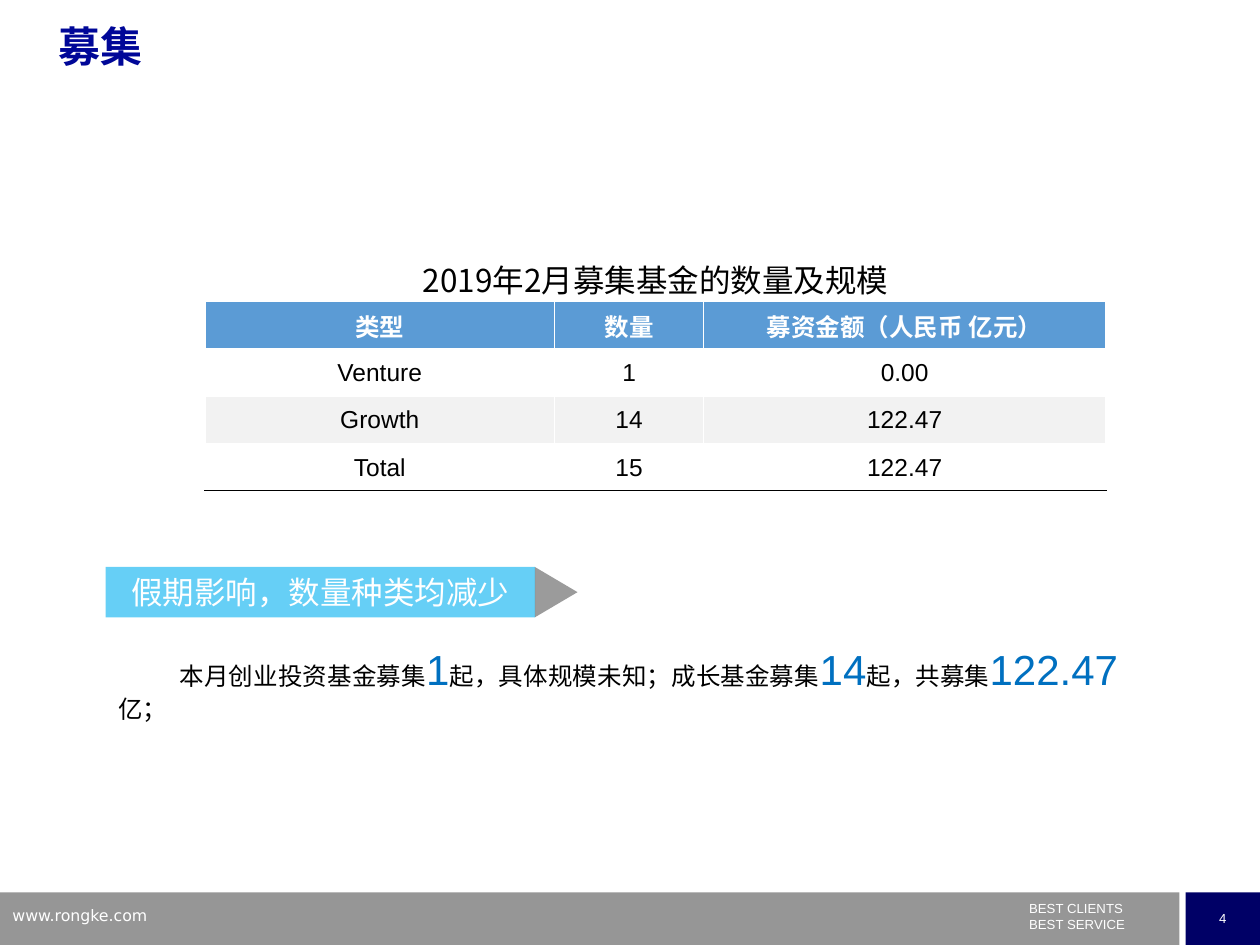
"""Build the fundraising slide with a fund table and a short commentary."""
from lxml import etree
from pptx import Presentation
from pptx.dml.color import RGBColor
from pptx.enum import shapes, text
from pptx.oxml import ns
from pptx.util import Pt

WHITE = RGBColor(0xFF, 0xFF, 0xFF)
BLACK = RGBColor(0, 0, 0)
GREY = RGBColor(0x96, 0x96, 0x96)
DARK_GREY = RGBColor(0x59, 0x59, 0x59)
BAND = RGBColor(0xF2, 0xF2, 0xF2)
NAVY = RGBColor(0, 0, 0x66)
TITLE_BLUE = RGBColor(0, 0x07, 0x98)
HEADER_BLUE = RGBColor(0x5B, 0x9B, 0xD5)
SKY = RGBColor(0, 0xB0, 0xF0)
NUMBER_BLUE = RGBColor(0, 0x70, 0xC0)

ARIAL, DEJAVU = "Arial", "DejaVu Sans"
CJK, CJK_JP = "Noto Sans CJK SC", "Noto Sans CJK JP"
CENTER = text.PP_ALIGN.CENTER
MIDDLE = text.MSO_ANCHOR.MIDDLE


def style(size, name, color, bold=False):
    return {"size": Pt(size), "name": name, "color": color, "bold": bold}


TITLE = style(24, ARIAL, TITLE_BLUE, True)
CAPTION = style(18, CJK_JP, BLACK)
HEADER = style(14, CJK, WHITE, True)
CELL = style(14, ARIAL, BLACK)
CALLOUT = style(18, CJK, WHITE)
BODY = style(14, CJK, BLACK)
NUMBER = style(24, ARIAL, NUMBER_BLUE)
FOOTER = style(7.5, ARIAL, WHITE)
ADDRESS = style(9, DEJAVU, WHITE)

COMMENTARY = [
    ("本月创业投资基金募集", BODY), ("1", NUMBER),
    ("起，具体规模未知；成长基金募集", BODY), ("14", NUMBER),
    ("起，共募集", BODY), ("122.47", NUMBER), ("亿；", BODY),
]
TABLE_ROWS = [
    (("2019年2月募集基金的数量及规模",), CAPTION, None),
    (("类型", "数量", "募资金额（人民币 亿元）"), HEADER, HEADER_BLUE),
    (("Venture", "1", "0.00"), CELL, None),
    (("Growth", "14", "122.47"), CELL, BAND),
    (("Total", "15", "122.47"), CELL, None),
]
COLUMN_WIDTHS = (200, 85, 230)
ROW_HEIGHT = 27


def write(paragraph, runs, **formats):
    for key, value in formats.items():
        setattr(paragraph, key, value)
    for words, look in runs:
        run = paragraph.add_run()
        run.text = words
        for key in ("size", "name", "bold"):
            setattr(run.font, key, look[key])
        run.font.color.rgb = look["color"]
        east_asian = etree.SubElement(run.font._element, ns.qn("a:ea"))
        east_asian.set("typeface", CJK if look["name"] == ARIAL else look["name"])


def add_text(slide, box, paragraphs, frame_formats=None, **formats):
    frame = slide.shapes.add_textbox(*map(Pt, box)).text_frame
    frame.word_wrap = True
    for key, value in (frame_formats or {}).items():
        setattr(frame, key, value)
    for index, runs in enumerate(paragraphs):
        paragraph = frame.add_paragraph() if index else frame.paragraphs[0]
        write(paragraph, runs, **formats)


def add_block(slide, kind, box, color, runs=(), opacity=None, rotation=0):
    shape = slide.shapes.add_shape(kind, *map(Pt, box))
    shape.shadow.inherit = False
    shape.rotation = rotation
    shape.fill.solid()
    shape.fill.fore_color.rgb = color
    shape.line.fill.background()
    if opacity:
        fill_color = shape._element.spPr.find(".//" + ns.qn("a:srgbClr"))
        etree.SubElement(fill_color, ns.qn("a:alpha")).set("val", str(opacity * 1000))
    if runs:
        shape.text_frame.vertical_anchor = MIDDLE
        write(shape.text_frame.paragraphs[0], runs, alignment=CENTER)


def add_bottom_border(cell):
    line = etree.Element(ns.qn("a:lnB"), w=str(Pt(1)))
    fill = etree.SubElement(line, ns.qn("a:solidFill"))
    etree.SubElement(fill, ns.qn("a:srgbClr")).set("val", str(BLACK))
    cell._tc.get_or_add_tcPr().insert(0, line)


def add_fund_table(slide, left, top):
    size = (sum(COLUMN_WIDTHS), ROW_HEIGHT * len(TABLE_ROWS))
    table = slide.shapes.add_table(
        len(TABLE_ROWS), len(COLUMN_WIDTHS), *map(Pt, (left, top, *size))).table
    table.first_row = table.horz_banding = False
    for column, width in zip(table.columns, COLUMN_WIDTHS):
        column.width = Pt(width)
    table.cell(0, 0).merge(table.cell(0, len(COLUMN_WIDTHS) - 1))
    cell_formats = {
        "margin_left": Pt(0.7), "margin_right": Pt(0.7), "margin_top": Pt(0.7),
        "margin_bottom": 0, "vertical_anchor": MIDDLE,
    }
    for row, (values, look, color) in enumerate(TABLE_ROWS):
        table.rows[row].height = Pt(ROW_HEIGHT)
        for column in range(len(COLUMN_WIDTHS)):
            cell = table.cell(row, column)
            for key, value in cell_formats.items():
                setattr(cell, key, value)
            if color is None:
                cell.fill.background()
            else:
                cell.fill.solid()
                cell.fill.fore_color.rgb = color
            if column < len(values):
                write(cell.text_frame.paragraphs[0], [(values[column], look)],
                      alignment=CENTER)
            if row == len(TABLE_ROWS) - 1:
                add_bottom_border(cell)


def main():
    presentation = Presentation()
    presentation.slide_width, presentation.slide_height = Pt(720), Pt(540)
    slide = presentation.slides.add_slide(presentation.slide_layouts[6])
    rectangle = shapes.MSO_SHAPE.RECTANGLE
    triangle = shapes.MSO_SHAPE.ISOSCELES_TRIANGLE

    add_block(slide, rectangle, (0, 510, 674, 30), GREY)
    add_block(slide, rectangle, (677.6, 510, 42.4, 30), NAVY, [("4", FOOTER)])
    add_text(slide, (581, 514.5, 108, 20.5),
             [[("BEST CLIENTS", FOOTER)], [("BEST SERVICE", FOOTER)]],
             {"margin_top": 0, "margin_bottom": 0})
    add_text(slide, (0, 514, 173, 19), [[("www.rongke.com", ADDRESS)]])

    add_text(slide, (60.5, 364.3, 585.5, 53.3), [COMMENTARY],
             alignment=text.PP_ALIGN.JUSTIFY)
    first_line = slide.shapes[-1].text_frame.paragraphs[0]
    first_line._p.get_or_add_pPr().set("indent", str(Pt(35)))

    add_block(slide, rectangle, (60.3, 324, 245.5, 28.8), SKY,
              [("假期影响，数量种类均减少", CALLOUT)], opacity=60)
    add_block(slide, triangle, (303.4, 326.2, 28.8, 24.4), DARK_GREY,
              opacity=60, rotation=90)

    add_text(slide, (26.5, 11.5, 648, 50.4), [[("募集", TITLE)]], line_spacing=0.9)
    add_fund_table(slide, 117, 145.4)
    presentation.save("out.pptx")


if __name__ == "__main__":
    main()
